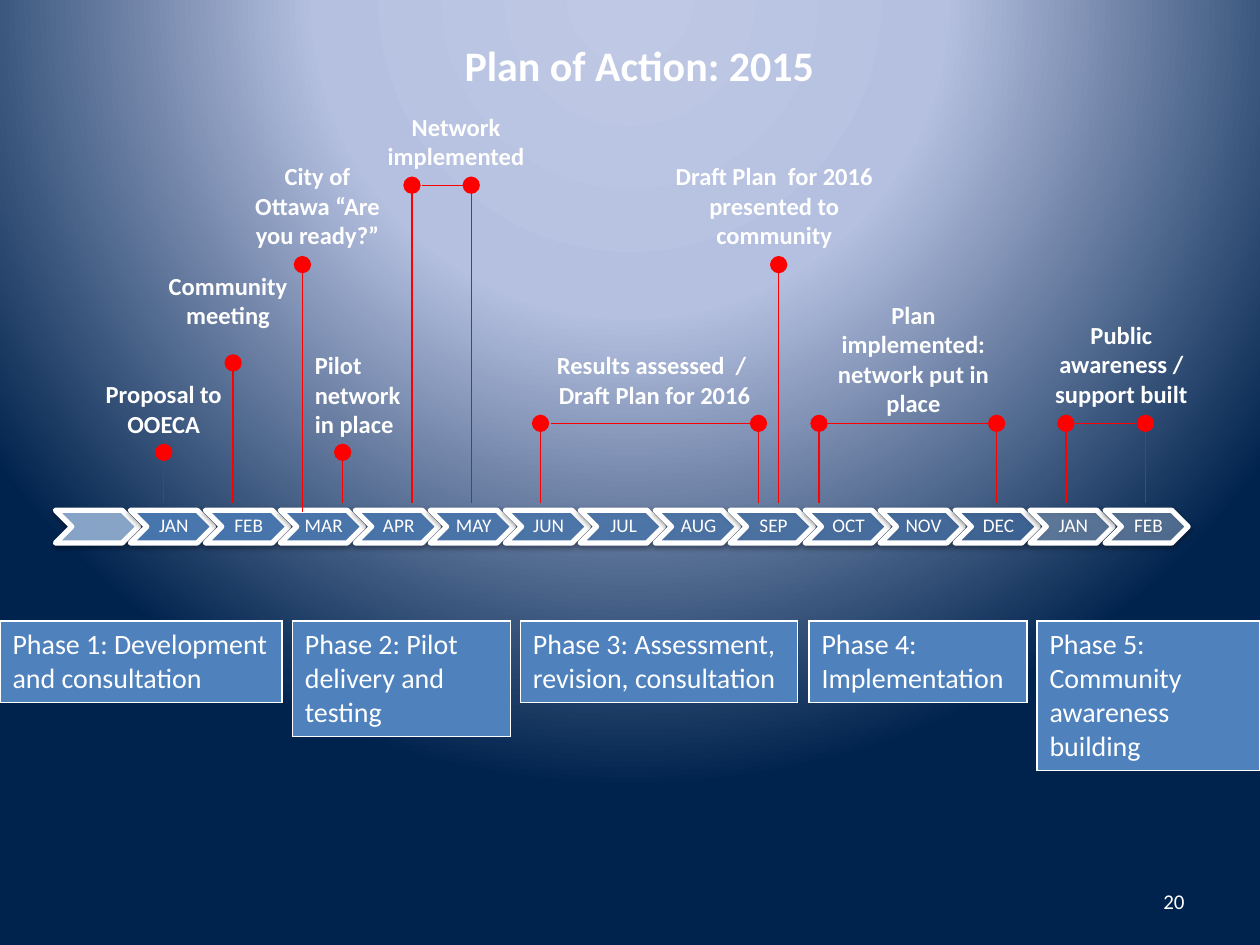
from lxml import etree
from pptx import Presentation
from pptx.dml.color import RGBColor
from pptx.enum.shapes import MSO_CONNECTOR, MSO_SHAPE
from pptx.enum.text import MSO_ANCHOR, MSO_AUTO_SIZE, PP_ALIGN
from pptx.oxml import parse_xml
from pptx.oxml.ns import nsdecls, qn
from pptx.util import Inches, Pt

LEFT, CENTER, RIGHT = PP_ALIGN.LEFT, PP_ALIGN.CENTER, PP_ALIGN.RIGHT
MIDDLE = MSO_ANCHOR.MIDDLE
GROW = MSO_AUTO_SIZE.SHAPE_TO_FIT_TEXT
CHEVRON = MSO_SHAPE.CHEVRON
STRAIGHT = MSO_CONNECTOR.STRAIGHT

WHITE = RGBColor(0xFF, 0xFF, 0xFF)
RED = RGBColor(0xFF, 0x00, 0x00)
BLUE = RGBColor(0x4F, 0x81, 0xBD)
PALE = RGBColor(0x95, 0xB3, 0xD7)


def style(frame, size, bold=False, align=LEFT):
    """Format all text of a frame in white Calibri."""
    for para in frame.paragraphs:
        para.alignment = align
        for run in para.runs:
            run.font.name = "Calibri"
            run.font.size = Pt(size)
            run.font.bold = bold
            run.font.color.rgb = WHITE


def draw_line(x1, y1, x2, y2, dot=False):
    """Draw a red line, with a round dot at its end if asked."""
    line = slide.shapes.add_connector(
        STRAIGHT, Inches(x1), Inches(y1), Inches(x2), Inches(y2))
    line.line.color.rgb = RED
    line.line.width = Pt(0.75)
    props = line._element.spPr
    if dot:
        etree.SubElement(props.find(qn("a:ln")), qn("a:tailEnd"),
                         type="oval", w="lg", len="lg")
    etree.SubElement(props, qn("a:effectLst"))


prs = Presentation()
prs.slide_width, prs.slide_height = Inches(10), Inches(7.5)
slide = prs.slides.add_slide(prs.slide_layouts[5])

# Background: light spreading from above the top edge
stops = "".join(
    f'<a:gs pos="{pos * 1000}"><a:srgbClr val="{tint}"/></a:gs>'
    for pos, tint in [(0, "BFC9E5"), (40, "B5C0E0"), (100, "00234D")])
slide.element.cSld.insert(0, parse_xml(
    f'<p:bg {nsdecls("p", "a")}><p:bgPr><a:gradFill rotWithShape="1">'
    f'<a:gsLst>{stops}</a:gsLst><a:path path="circle">'
    '<a:fillToRect l="50000" t="-80000" r="50000" b="180000"/></a:path>'
    '</a:gradFill><a:effectLst/></p:bgPr></p:bg>'))

title = slide.shapes.title
title.left, title.top = Inches(0.51), Inches(0.21)
title.width, title.height = Inches(9.13), Inches(0.6)
title.text_frame.text = "Plan of Action: 2015"
title.text_frame.vertical_anchor = MIDDLE
style(title.text_frame, 24, True, CENTER)

# Month band: the blue of the year fades towards its end
months = ["", "JAN", "FEB", "MAR", "APR", "MAY", "JUN", "JUL", "AUG", "SEP",
          "OCT", "NOV", "DEC", "JAN", "FEB"]
for i, month in enumerate(months):
    if i == 0:
        tint, alpha = PALE, 90
    elif i <= 12:
        tint, alpha = BLUE, round(87 - (i - 1) * 31 / 11)
    else:
        tint, alpha = PALE, 50
    step = slide.shapes.add_shape(
        CHEVRON, Inches(0.44 + 0.595 * i), Inches(4.05),
        Inches(0.66), Inches(0.26))
    step.fill.solid()
    step.fill.fore_color.rgb = tint
    step.line.color.rgb = WHITE
    step.line.width = Pt(3)
    props = step._element.spPr
    etree.SubElement(props.find(qn("a:solidFill"))[0], qn("a:alpha"),
                     val=str(alpha * 1000))
    props.append(parse_xml(
        f'<a:effectLst {nsdecls("a")}><a:outerShdw blurRad="{Pt(3.1)}" '
        f'dist="{Pt(1.6)}" dir="5400000" rotWithShape="0">'
        '<a:srgbClr val="000000"><a:alpha val="38000"/></a:srgbClr>'
        '</a:outerShdw></a:effectLst>'))
    if month:
        frame = step.text_frame
        frame.text = month
        frame.word_wrap = False
        frame.vertical_anchor = MIDDLE
        frame.margin_left = Inches(0.05)
        frame.margin_right = frame.margin_top = frame.margin_bottom = Inches(0.02)
        frame.paragraphs[0].line_spacing = 0.9
        style(frame, 11, align=CENTER)

# Phases: left, width, height, text
phases = [
    (0, 2.24, 0.63, "Phase 1: Development and consultation"),
    (2.32, 1.73, 0.9, "Phase 2: Pilot delivery and testing"),
    (4.13, 2.2, 0.63, "Phase 3: Assessment, revision, consultation"),
    (6.42, 1.73, 0.63, "Phase 4: Implementation"),
    (8.23, 1.77, 1.17, "Phase 5: Community awareness building"),
]
for left, width, height, text in phases:
    table = slide.shapes.add_table(
        1, 1, Inches(left), Inches(4.93), Inches(width), Inches(height)).table
    cell = table.cell(0, 0)
    cell.fill.solid()
    cell.fill.fore_color.rgb = BLUE
    cell.text_frame.text = text
    style(cell.text_frame, 16)

# Pins rise from the month band; bars join the two pins of a period
pins = [(1.3, 3.59), (1.85, 2.88), (2.4, 2.1), (2.72, 3.59), (3.27, 1.47),
        (3.74, 1.47), (4.29, 3.36), (6.02, 3.36), (6.18, 2.1), (6.5, 3.36),
        (7.91, 3.36), (8.46, 3.36), (9.09, 3.36)]
for x, top in pins:
    foot = 4.06 if x == 2.4 else 3.99
    draw_line(x, foot, x, top, dot=True)

bars = [(3.35, 3.74, 1.47), (4.37, 6.02, 3.36), (6.57, 7.91, 3.36),
        (8.54, 9.02, 3.36)]
for start, end, y in bars:
    draw_line(start, y, end, y)

# Events: left, top, width, height, alignment, text
events = [
    (0.67, 2.96, 1.26, 0.57, CENTER, "Proposal to OOECA"),
    (1.22, 2.1, 1.18, 0.57, CENTER, "Community\nmeeting"),
    (1.85, 1.23, 1.34, 1.01, CENTER, "City of Ottawa “Are you ready?”"),
    (2.4, 2.73, 1.02, 0.81, LEFT, "Pilot network in place"),
    (2.95, 0.84, 1.34, 0.77, CENTER, "Network implemented"),
    (4.13, 2.73, 2.13, 0.77, CENTER, "Results assessed  / \vDraft Plan for 2016"),
    (5.16, 1.23, 1.97, 1.01, CENTER,
     "Draft Plan  for 2016 presented to community"),
    (6.5, 2.33, 1.5, 1.25, CENTER, "Plan implemented: network put in place"),
    (8.15, 2.49, 1.5, 1.01, CENTER, "Public awareness / support built"),
]
for left, top, width, height, align, text in events:
    frame = slide.shapes.add_textbox(
        Inches(left), Inches(top), Inches(width), Inches(height)).text_frame
    frame.text = text
    frame.word_wrap = True
    frame.auto_size = GROW
    style(frame, 14, True, align)

number = slide.shapes.add_textbox(
    Inches(7.17), Inches(6.95), Inches(2.33), Inches(0.4)).text_frame
number.text = "20"
number.word_wrap = True
number.vertical_anchor = MIDDLE
style(number, 12, align=RIGHT)

prs.save("out.pptx")
